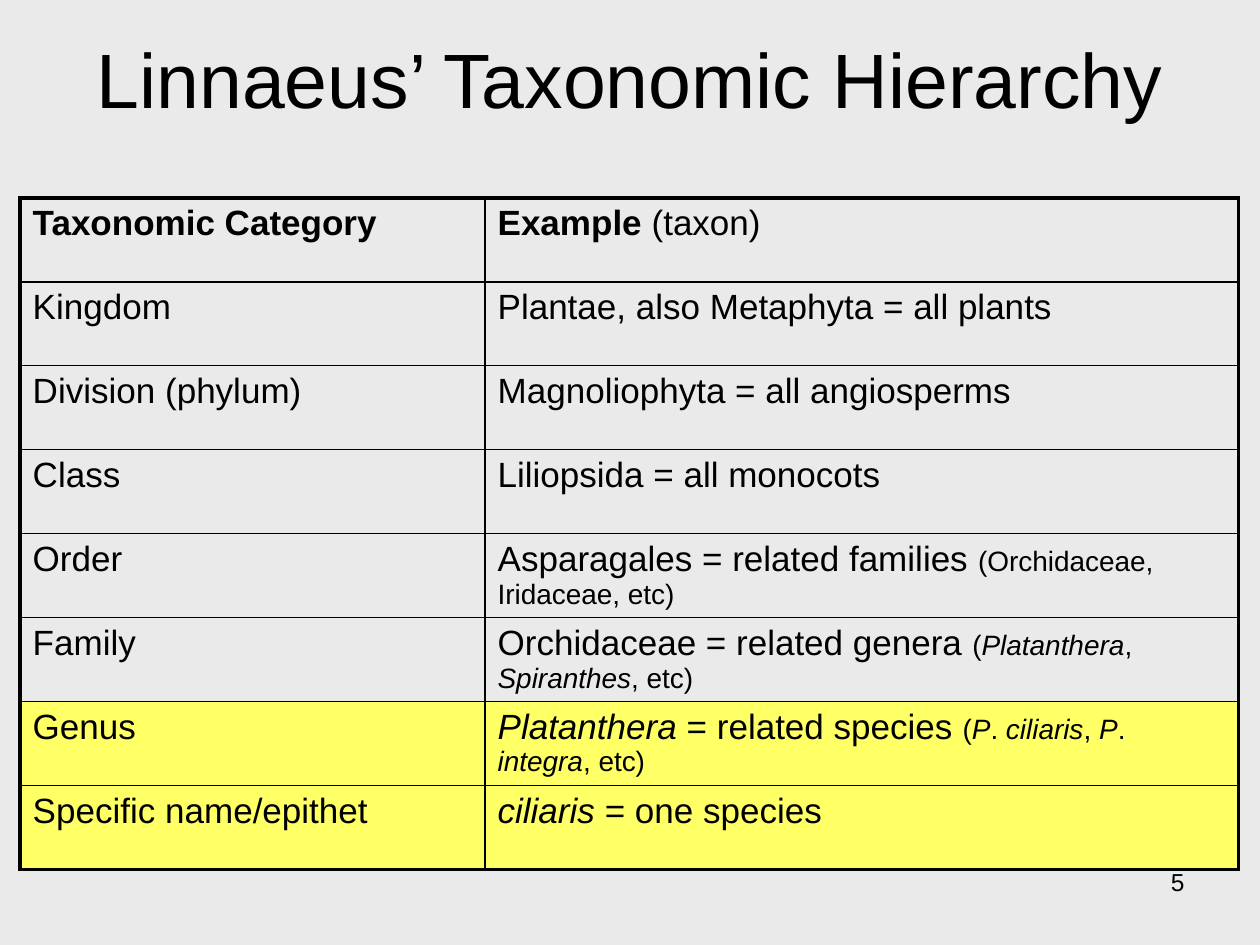
"""Build the slide on the taxonomic hierarchy of Linnaeus."""

from dataclasses import dataclass

from lxml.etree import SubElement
from pptx import Presentation
from pptx.dml.color import RGBColor
from pptx.enum.text import MSO_ANCHOR, PP_ALIGN
from pptx.oxml.ns import qn
from pptx.slide import Slide
from pptx.table import _Cell
from pptx.text.text import TextFrame
from pptx.util import Inches, Pt


@dataclass(frozen=True)
class Theme:
    font: str = "Arial"
    ink: str = "000000"
    paper: str = "EAEAEA"
    glow: str = "FFFF66"
    title: int = 44
    body: int = 20
    note: int = 16
    page: int = 14
    thin: float = 1
    thick: float = 2.25


THEME = Theme()


@dataclass(frozen=True)
class Span:
    text: str
    size: int = THEME.body
    bold: bool = False
    italic: bool = False


@dataclass(frozen=True)
class Rank:
    name: Span
    taxon: tuple[Span, ...]
    glow: bool = False


def note(text: str, italic: bool = False) -> Span:
    return Span(text, THEME.note, italic=italic)


RANKS = (
    Rank(Span("Taxonomic Category", bold=True),
         (Span("Example", bold=True), Span(" (taxon)"))),
    Rank(Span("Kingdom"), (Span("Plantae, also Metaphyta = all plants"),)),
    Rank(Span("Division (phylum)"), (Span("Magnoliophyta = all angiosperms"),)),
    Rank(Span("Class"), (Span("Liliopsida = all monocots"),)),
    Rank(Span("Order"), (Span("Asparagales = related families "),
                         note("(Orchidaceae, Iridaceae, etc)"))),
    Rank(Span("Family"), (Span("Orchidaceae = related genera "), note("("),
                          note("Platanthera", True), note(", "),
                          note("Spiranthes", True), note(", etc)"))),
    Rank(Span("Genus"), (Span("Platanthera", italic=True),
                         Span(" = related species "), note("("),
                         note("P", True), note("."), note(" ciliaris", True),
                         note(", "), note("P", True), note("."),
                         note(" integra", True), note(", etc)")), glow=True),
    Rank(Span("Specific name/epithet"),
         (Span("ciliaris", italic=True), Span(" = one species")), glow=True),
)


def write(frame: TextFrame, *spans: Span, align: PP_ALIGN = PP_ALIGN.LEFT,
          anchor: MSO_ANCHOR = MSO_ANCHOR.TOP) -> None:
    frame.word_wrap = True
    frame.vertical_anchor = anchor
    para = frame.paragraphs[0]
    para.alignment = align
    for span in spans:
        run = para.add_run()
        run.text = span.text
        font = run.font
        font.name = THEME.font
        font.size = Pt(span.size)
        font.bold = span.bold
        font.italic = span.italic
        font.color.rgb = RGBColor.from_string(THEME.ink)


def border(cell: _Cell, thick: dict[str, bool]) -> None:
    props = cell._tc.get_or_add_tcPr()
    for at, (side, heavy) in enumerate(thick.items()):
        width = Pt(THEME.thick if heavy else THEME.thin)
        line = props.makeelement(qn(f"a:ln{side}"), {"w": str(int(width))})
        fill = SubElement(line, qn("a:solidFill"))
        SubElement(fill, qn("a:srgbClr"), val=THEME.ink)
        props.insert(at, line)


def chart_ranks(slide: Slide) -> None:
    cols = (Inches(3.69), Inches(5.98))
    high = Inches(5.33)
    grid = slide.shapes.add_table(len(RANKS), len(cols), Inches(0.16),
                                  Inches(1.57), sum(cols), high).table
    grid.first_row = grid.horz_banding = False
    for col, width in zip(grid.columns, cols):
        col.width = width
    last = len(RANKS) - 1
    for y, rank in enumerate(RANKS):
        grid.rows[y].height = high // len(RANKS)
        for x, spans in enumerate(((rank.name,), rank.taxon)):
            cell = grid.cell(y, x)
            cell.margin_bottom = Inches(0)
            write(cell.text_frame, *spans)
            if rank.glow:
                cell.fill.solid()
                cell.fill.fore_color.rgb = RGBColor.from_string(THEME.glow)
            else:
                cell.fill.background()
            border(cell, {"L": x == 0, "R": x == 1, "T": y == 0, "B": y == last})


def main() -> None:
    deck = Presentation()
    deck.slide_width, deck.slide_height = Inches(10), Inches(7.5)
    slide = deck.slides.add_slide(deck.slide_layouts[6])
    back = slide.background.fill
    back.solid()
    back.fore_color.rgb = RGBColor.from_string(THEME.paper)

    page = slide.shapes.add_textbox(Inches(7.17), Inches(6.83), Inches(2.33), Inches(0.52))
    write(page.text_frame, Span("5", THEME.page), align=PP_ALIGN.RIGHT)
    title = slide.shapes.add_textbox(Inches(0.5), Inches(0.16), Inches(9), Inches(0.92))
    write(title.text_frame, Span("Linnaeus’ Taxonomic Hierarchy", THEME.title),
          align=PP_ALIGN.CENTER, anchor=MSO_ANCHOR.MIDDLE)
    chart_ranks(slide)
    deck.save("out.pptx")


if __name__ == "__main__":
    main()
